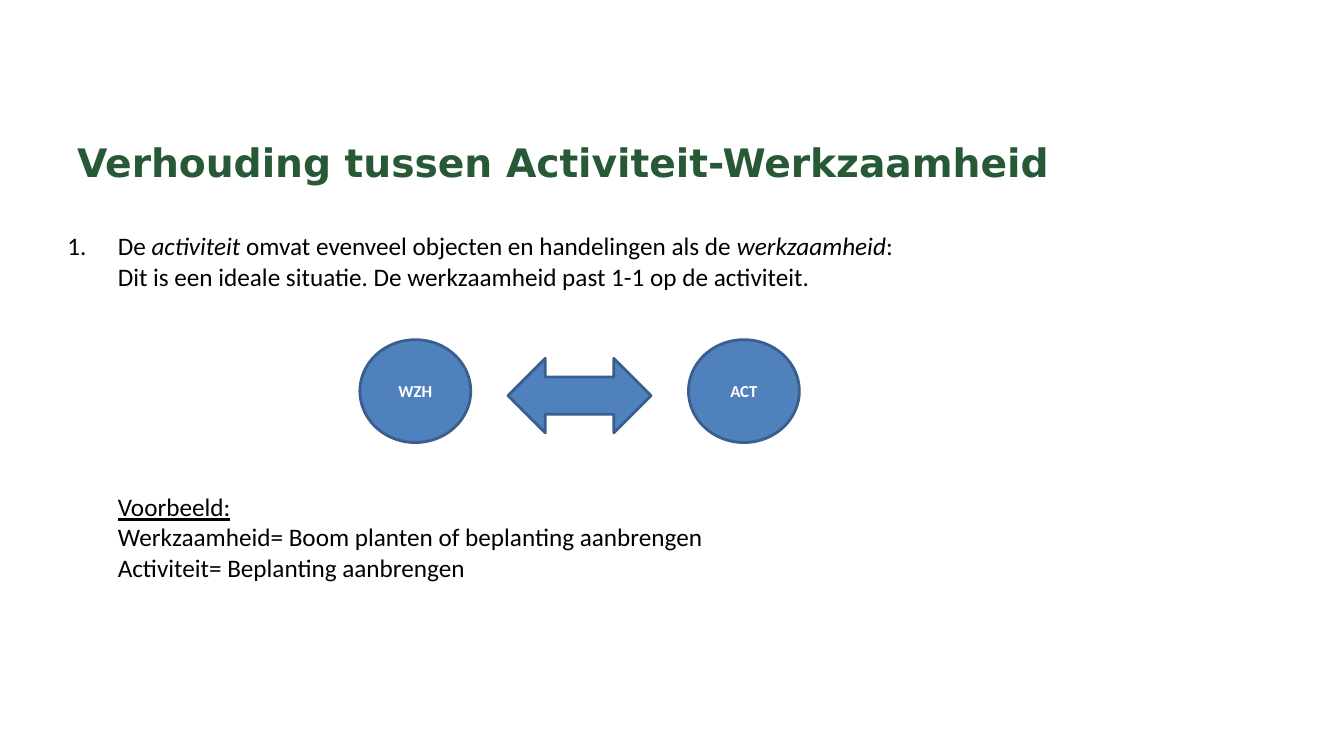
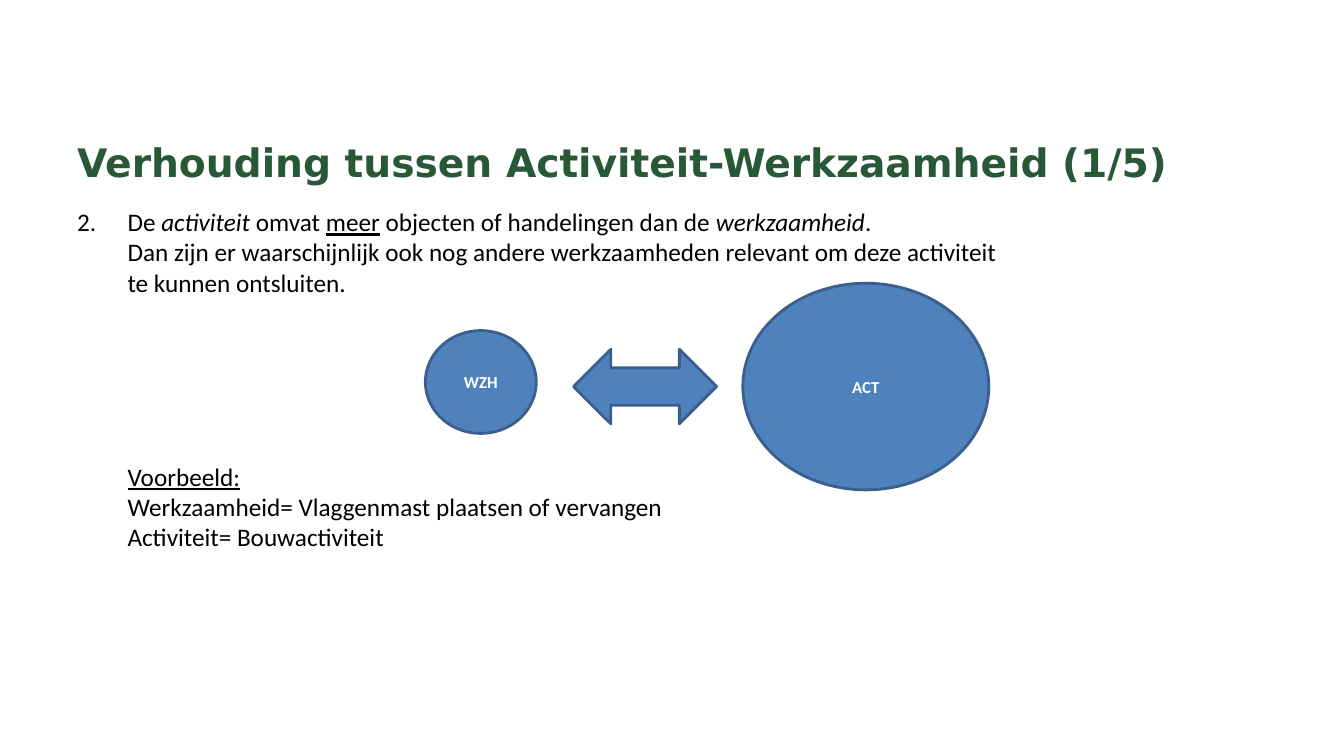
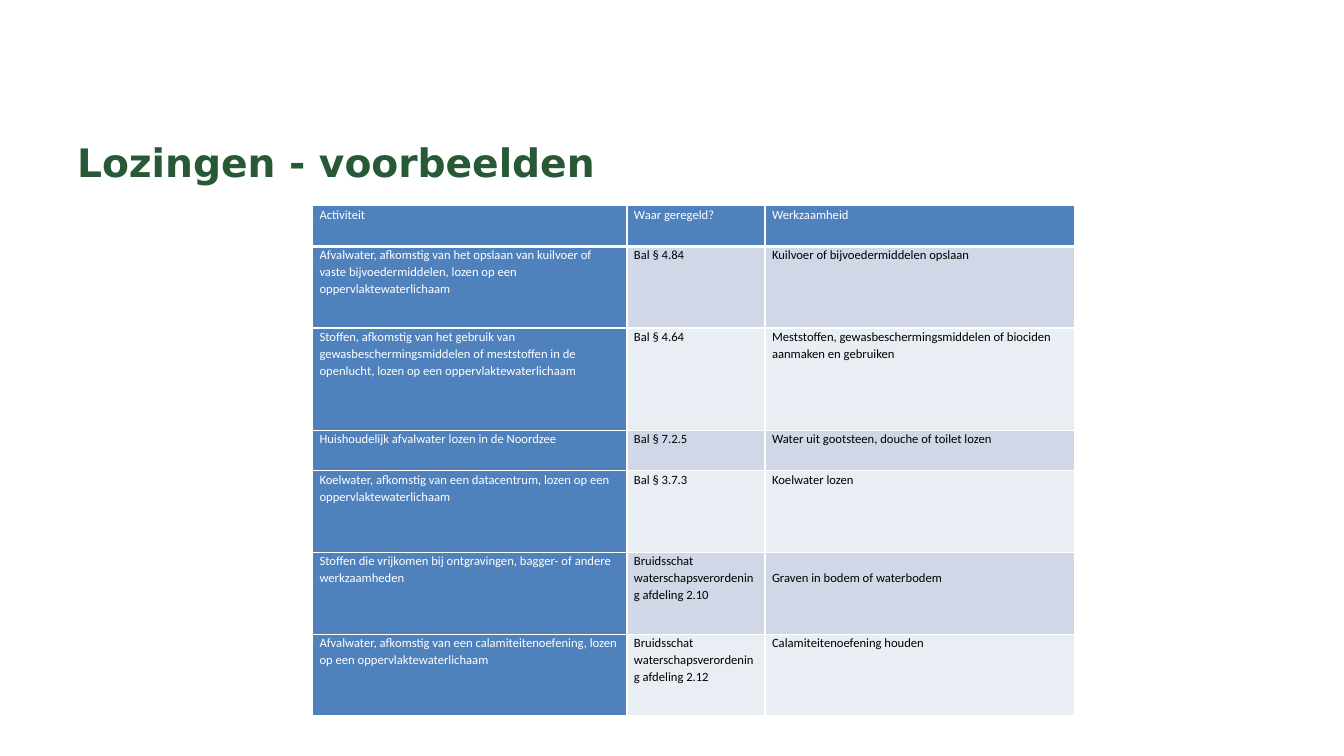
from lxml.etree import SubElement
from pptx import Presentation
from pptx.dml.color import RGBColor
from pptx.enum.shapes import MSO_SHAPE
from pptx.enum.text import MSO_ANCHOR, MSO_AUTO_SIZE, PP_ALIGN
from pptx.oxml.ns import qn
from pptx.util import Inches, Pt

GREEN = RGBColor(0x27, 0x59, 0x37)
BLUE = RGBColor(0x4F, 0x81, 0xBD)
DARK_BLUE = RGBColor(0x3A, 0x5F, 0x8C)
BAND_DARK = RGBColor(0xD0, 0xD8, 0xE8)
BAND_LIGHT = RGBColor(0xE9, 0xED, 0xF4)
WHITE = RGBColor(0xFF, 0xFF, 0xFF)
BLACK = RGBColor(0, 0, 0)

ITALIC = {"italic": True}
UNDERLINE = {"underline": True}


class Deck:
    COLUMNS, ROWS = 40, 30
    TITLE = ({"name": "DejaVu Sans", "size": Pt(28), "bold": True}, GREEN)
    BODY = ({"name": "Calibri", "size": Pt(18)}, BLACK)
    LABEL = ({"name": "Calibri", "size": Pt(12), "bold": True}, WHITE)
    HEADING_CELL = ({"name": "Calibri", "size": Pt(9)}, WHITE)
    CELL = ({"name": "Calibri", "size": Pt(9)}, BLACK)
    CIRCLE = (3.3, 4.08)

    def __init__(self):
        self.presentation = Presentation()
        self.presentation.slide_width = Inches(13.33)
        self.presentation.slide_height = Inches(7.5)
        self.slide = None

    def across(self, columns):
        return round(self.presentation.slide_width * columns / self.COLUMNS)

    def down(self, rows):
        return round(self.presentation.slide_height * rows / self.ROWS)

    def box(self, left, top, width, height):
        return self.across(left), self.down(top), self.across(width), self.down(height)

    def apply(self, target, values):
        for name, value in values.items():
            setattr(target, name, value)

    def add_text(self, paragraph, text, style, extra=None):
        values, color = style
        run = paragraph.add_run()
        run.text = text
        self.apply(run.font, {**values, **(extra or {})})
        run.font.color.rgb = color

    def new_slide(self, title):
        self.slide = self.presentation.slides.add_slide(self.presentation.slide_layouts[6])
        frame = self.slide.shapes.add_textbox(*self.box(2, 5.12, 36, 2.92)).text_frame
        self.apply(frame, {"word_wrap": True, "margin_top": Inches(0.09)})
        self.add_text(frame.paragraphs[0], title, self.TITLE)

    def numbered_text(self, box, number, lines, example, gap):
        frame = self.slide.shapes.add_textbox(*self.box(*box)).text_frame
        self.apply(frame, {"word_wrap": True, "auto_size": MSO_AUTO_SIZE.SHAPE_TO_FIT_TEXT})
        heading = [("Voorbeeld:", UNDERLINE)]
        for index, runs in enumerate([*lines, heading, *example]):
            paragraph = frame.add_paragraph() if index else frame.paragraphs[0]
            properties = paragraph._p.get_or_add_pPr()
            properties.set("marL", str(Inches(0.5)))
            properties.set("indent", str(0 if index else -Inches(0.5)))
            if index == 0:
                bullet = SubElement(properties, qn("a:buAutoNum"), type="arabicPeriod")
                bullet.set("startAt", str(number))
            if runs is heading:
                paragraph.space_before = Pt(gap)
            for text, extra in runs:
                self.add_text(paragraph, text, self.BODY, extra)

    def block(self, kind, box, label=""):
        shape = self.slide.shapes.add_shape(kind, *self.box(*box))
        shape.shadow.inherit = False
        shape.fill.solid()
        shape.fill.fore_color.rgb = BLUE
        shape.line.color.rgb = DARK_BLUE
        shape.line.width = Pt(2)
        if label:
            shape.text_frame.vertical_anchor = MSO_ANCHOR.MIDDLE
            paragraph = shape.text_frame.paragraphs[0]
            paragraph.alignment = PP_ALIGN.CENTER
            self.add_text(paragraph, label, self.LABEL)

    def relation(self, left, top, activity_box):
        self.block(MSO_SHAPE.OVAL, (left, top, *self.CIRCLE), "WZH")
        self.block(MSO_SHAPE.OVAL, activity_box, "ACT")
        self.block(MSO_SHAPE.LEFT_RIGHT_ARROW, (left + 4.41, top + 0.74, 4.26, 2.96))

    def border(self, cell, bottom):
        properties = cell._tc.get_or_add_tcPr()
        widths = {"a:lnL": 1, "a:lnR": 1, "a:lnT": 1, "a:lnB": bottom}
        for position, (tag, width) in enumerate(widths.items()):
            line = properties.makeelement(qn(tag), {"w": str(Pt(width))})
            fill = SubElement(line, qn("a:solidFill"))
            SubElement(fill, qn("a:srgbClr"), val=str(WHITE))
            properties.insert(position, line)

    def table(self, left, top, widths, heights, rows):
        box = self.box(left, top, sum(widths), sum(heights))
        table = self.slide.shapes.add_table(len(rows), len(widths), *box).table
        for column, width in zip(table.columns, widths):
            column.width = self.across(width)
        for row, height in zip(table.rows, heights):
            row.height = self.down(height)
        for row_index, texts in enumerate(rows):
            band = BAND_DARK if row_index % 2 else BAND_LIGHT
            for column_index, text in enumerate(texts):
                is_heading = row_index == 0 or column_index == 0
                cell = table.cell(row_index, column_index)
                self.apply(cell, {"margin_left": Inches(0.07), "margin_right": Inches(0.07),
                                  "margin_top": 0, "margin_bottom": 0})
                cell.fill.solid()
                cell.fill.fore_color.rgb = BLUE if is_heading else band
                self.border(cell, bottom=1 if row_index else 3)
                paragraph = cell.text_frame.paragraphs[0]
                paragraph.line_spacing = Pt(12)
                self.add_text(paragraph, text, self.HEADING_CELL if is_heading else self.CELL)
        return table


def main():
    deck = Deck()

    deck.new_slide("Verhouding tussen Activiteit-Werkzaamheid")
    deck.numbered_text(
        (1.71, 8.96, 28.17, 14.56), 1,
        [[("De ", {}), ("activiteit", ITALIC),
          (" omvat evenveel objecten en handelingen als de ", {}),
          ("werkzaamheid", ITALIC), (":", {})],
         [("Dit is een ideale situatie. De werkzaamheid past 1-1 op de activiteit.", {})]],
        [[("Werkzaamheid= Boom planten of beplanting aanbrengen", {})],
         [("Activiteit= Beplanting aanbrengen", {})]],
        gap=143)
    deck.relation(10.71, 13.48, (20.49, 13.48, *deck.CIRCLE))

    deck.new_slide("Verhouding tussen Activiteit-Werkzaamheid (1/5)")
    deck.relation(12.66, 13.12, (22.11, 11.24, 7.32, 8.2))
    deck.numbered_text(
        (2, 8, 28.74, 14.28), 2,
        [[("De ", {}), ("activiteit", ITALIC), (" omvat ", {}), ("meer", UNDERLINE),
          (" objecten of handelingen dan de ", {}), ("werkzaamheid", ITALIC), (".", {})],
         [("Dan zijn er waarschijnlijk ook nog andere werkzaamheden relevant "
           "om deze activiteit te kunnen ontsluiten.", {})]],
        [[("Werkzaamheid= Vlaggenmast plaatsen of vervangen", {})],
         [("Activiteit= Bouwactiviteit", {})]],
        gap=117)

    deck.new_slide("Lozingen - voorbeelden")
    discharges = deck.table(
        9.3, 8.16, [9.36, 4.11, 9.21],
        [1.62 * share for share in (1, 2, 2.5, 1, 2, 2, 2)],
        [("Activiteit", "Waar geregeld?", "Werkzaamheid"),
         ("Afvalwater, afkomstig van het opslaan van kuilvoer of vaste bijvoedermiddelen, "
          "lozen op een oppervlaktewaterlichaam",
          "Bal § 4.84", "Kuilvoer of bijvoedermiddelen opslaan"),
         ("Stoffen, afkomstig van het gebruik van gewasbeschermingsmiddelen of meststoffen "
          "in de openlucht, lozen op een oppervlaktewaterlichaam",
          "Bal § 4.64",
          "Meststoffen, gewasbeschermingsmiddelen of biociden aanmaken en gebruiken"),
         ("Huishoudelijk afvalwater lozen in de Noordzee",
          "Bal § 7.2.5", "Water uit gootsteen, douche of toilet lozen"),
         ("Koelwater, afkomstig van een datacentrum, lozen op een oppervlaktewaterlichaam",
          "Bal § 3.7.3", "Koelwater lozen"),
         ("Stoffen die vrijkomen bij ontgravingen, bagger- of andere werkzaamheden",
          "Bruidsschat waterschapsverordening afdeling 2.10",
          "Graven in bodem of waterbodem"),
         ("Afvalwater, afkomstig van een calamiteitenoefening, "
          "lozen op een oppervlaktewaterlichaam",
          "Bruidsschat waterschapsverordening afdeling 2.12",
          "Calamiteitenoefening houden")])
    discharges.cell(5, 2).margin_top = Pt(12)

    deck.presentation.save("out.pptx")


if __name__ == "__main__":
    main()
